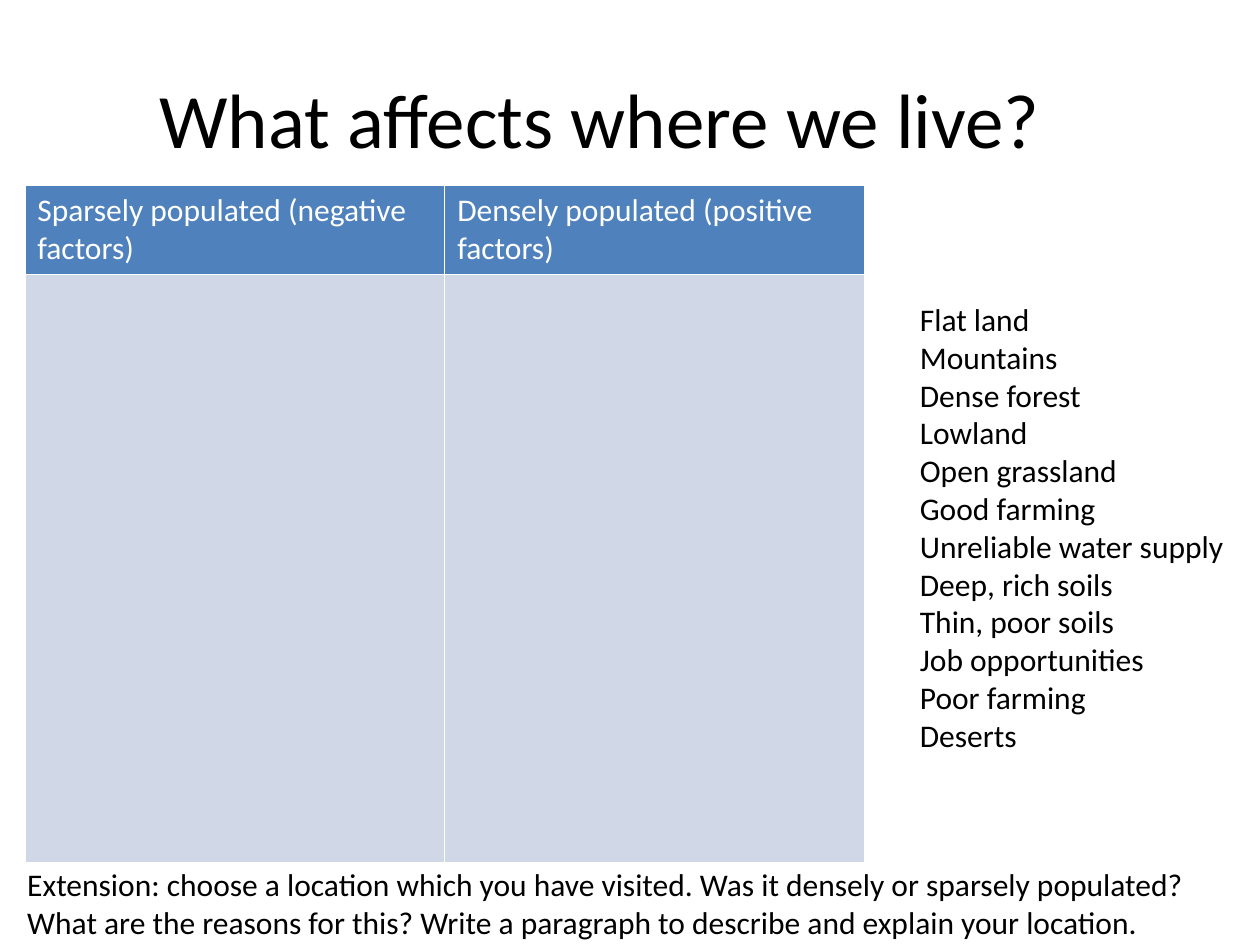
from dataclasses import dataclass

from lxml.etree import SubElement
from pptx import Presentation
from pptx.dml.color import RGBColor
from pptx.enum.text import MSO_ANCHOR, MSO_AUTO_SIZE as AutoSize, PP_ALIGN as Align
from pptx.oxml.ns import qn
from pptx.util import Cm, Pt

BLACK = RGBColor(0x00, 0x00, 0x00)
WHITE = RGBColor(0xFF, 0xFF, 0xFF)
HEADER_BLUE = RGBColor(0x4F, 0x81, 0xBD)
BODY_BLUE = RGBColor(0xD0, 0xD8, 0xE8)

TITLE_FORMAT = {"name": "Calibri", "size": Pt(44)}
TEXT_FORMAT = {"name": "Calibri", "size": Pt(18)}

HEADINGS = [
    "Sparsely populated (negative factors)",
    "Densely populated (positive factors)",
]
FACTORS = [
    "Flat land", "Mountains", "Dense forest", "Lowland",
    "Open grassland", "Good farming", "Unreliable water supply",
    "Deep, rich soils", "Thin, poor soils", "Job opportunities",
    "Poor farming", "Deserts",
]
EXTENSION = (
    "Extension: choose a location which you have visited. "
    "Was it densely or sparsely populated? What are the reasons for this? "
    "Write a paragraph to describe and explain your location."
)


@dataclass
class Box:
    """Position and size in centimetres."""
    left: float
    top: float
    width: float
    height: float

    def lengths(self) -> tuple:
        return Cm(self.left), Cm(self.top), Cm(self.width), Cm(self.height)


@dataclass
class TableRow:
    texts: list
    height: float
    fill: RGBColor


TITLE_BOX = Box(1.3, 0.33, 21.59, 4.09)
TABLE_BOX = Box(0.5, 3.73, 16.93, 13.66)
FACTORS_BOX = Box(18.29, 5.92, 6.71, 9.5)
EXTENSION_BOX = Box(0.3, 17.32, 24.71, 1.8)
TABLE_ROWS = [
    TableRow(HEADINGS, 1.8, HEADER_BLUE),
    TableRow(["", ""], 11.86, BODY_BLUE),
]


def place(shape, box: Box) -> None:
    shape.left, shape.top, shape.width, shape.height = box.lengths()


def write_text(text_frame, lines: list, font_format: dict,
               color: RGBColor = BLACK, align: Align = Align.LEFT) -> None:
    text_frame.text = "\n".join(lines)
    for paragraph in text_frame.paragraphs:
        paragraph.alignment = align
        paragraph.space_before = Pt(0)
        for key, value in font_format.items():
            setattr(paragraph.font, key, value)
        paragraph.font.bold = False
        paragraph.font.color.rgb = color


def remove_bullets(text_frame) -> None:
    for paragraph in text_frame.paragraphs:
        properties = paragraph._p.get_or_add_pPr()
        properties.set("marL", "0")
        properties.set("indent", "0")
        SubElement(properties, qn("a:buNone"))


def add_borders(cell, color: RGBColor, width: Pt) -> None:
    properties = cell._tc.get_or_add_tcPr()
    for side in ("lnL", "lnR", "lnT", "lnB"):
        line = SubElement(properties, qn(f"a:{side}"), w=str(int(width)))
        fill = SubElement(line, qn("a:solidFill"))
        SubElement(fill, qn("a:srgbClr"), val=str(color))


def add_factor_table(slide, box: Box, rows: list) -> None:
    columns = len(rows[0].texts)
    table = slide.shapes.add_table(len(rows), columns, *box.lengths()).table
    for row, content in zip(table.rows, rows):
        row.height = Cm(content.height)
        for cell, text in zip(row.cells, content.texts):
            add_borders(cell, WHITE, Pt(1))
            cell.fill.solid()
            cell.fill.fore_color.rgb = content.fill
            write_text(cell.text_frame, [text], TEXT_FORMAT, WHITE)


def main() -> None:
    presentation = Presentation()
    presentation.slide_width, presentation.slide_height = Cm(25.4), Cm(19.05)
    slide = presentation.slides.add_slide(presentation.slide_layouts[1])

    # Title
    title = slide.shapes.title
    place(title, TITLE_BOX)
    title.text_frame.vertical_anchor = MSO_ANCHOR.MIDDLE
    write_text(title.text_frame, ["What affects where we live?"],
               TITLE_FORMAT, align=Align.CENTER)

    # Sorting table
    add_factor_table(slide, TABLE_BOX, TABLE_ROWS)

    # List of factors
    factors = slide.placeholders[1]
    place(factors, FACTORS_BOX)
    write_text(factors.text_frame, FACTORS, TEXT_FORMAT)
    remove_bullets(factors.text_frame)
    factors.text_frame.word_wrap = False
    factors.text_frame.auto_size = AutoSize.SHAPE_TO_FIT_TEXT

    # Extension task
    extension = slide.shapes.add_textbox(*EXTENSION_BOX.lengths())
    extension.text_frame.word_wrap = True
    extension.text_frame.auto_size = AutoSize.SHAPE_TO_FIT_TEXT
    write_text(extension.text_frame, [EXTENSION], TEXT_FORMAT)

    presentation.save("out.pptx")


if __name__ == "__main__":
    main()
